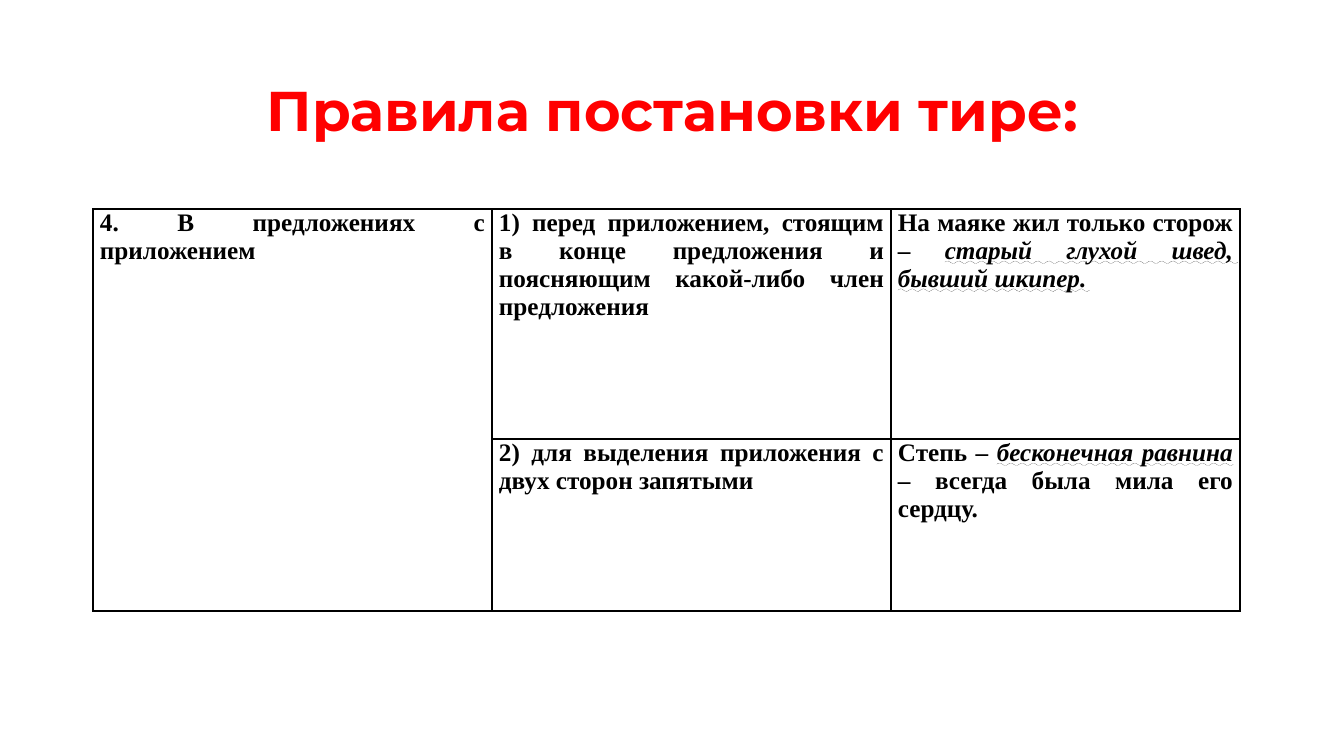
import pptx
import pptx.util
import pptx.dml.color
import pptx.enum.text
import pptx.oxml
import pptx.oxml.ns

TITLE = "Правила постановки тире:"
# (row, column, [(text, is an apposition), ...])
CELLS = [
    (0, 0, [("4. В предложениях с приложением", False)]),
    (0, 1, [("1) перед приложением, стоящим в конце предложения и "
             "поясняющим какой-либо член предложения", False)]),
    (0, 2, [("На маяке жил только сторож – ", False),
            ("старый глухой швед, бывший шкипер.", True)]),
    (1, 1, [("2) для выделения приложения с двух сторон запятыми", False)]),
    (1, 2, [("Степь – ", False), ("бесконечная равнина", True),
            (" – всегда была мила его сердцу.", False)]),
]

SLIDE_W, SLIDE_H = 1344, 756
TITLE_BOX = (93, 40, 1159, 146)
TABLE_LEFT, TABLE_TOP = 93, 209
COLS = [399, 399, 349]
ROWS = [230, 172]
CELL_INSET = 7

RED = pptx.dml.color.RGBColor(0xFF, 0x00, 0x00)
BLACK = pptx.dml.color.RGBColor(0x00, 0x00, 0x00)
ALIGN = pptx.enum.text.PP_ALIGN
ANCHOR = pptx.enum.text.MSO_ANCHOR
WAVY = pptx.enum.text.MSO_UNDERLINE.WAVY_LINE


def px(n):
    return pptx.util.Emu(round(n * 914400 / 100.8))


def add_run(p, text, font="Times New Roman", size=18, color=BLACK, apposition=False):
    r = p.add_run()
    r.text = text
    r.font.name = font
    r.font.size = pptx.util.Pt(size)
    r.font.bold = True
    r.font.color.rgb = color
    if apposition:
        r.font.italic = True
        r.font.underline = WAVY


def add_borders(cell):
    """Draw a 1 pt line on all four sides; call before setting the fill."""
    tc_pr = cell._tc.get_or_add_tcPr()
    for side in ("lnL", "lnR", "lnT", "lnB"):
        tc_pr.append(pptx.oxml.parse_xml(
            f'<a:{side} {pptx.oxml.ns.nsdecls("a")} w="12700"><a:solidFill>'
            f'<a:srgbClr val="{BLACK}"/></a:solidFill></a:{side}>'))


prs = pptx.Presentation()
prs.slide_width, prs.slide_height = px(SLIDE_W), px(SLIDE_H)
s = prs.slides.add_slide(prs.slide_layouts[5])

title = s.shapes.title
title.left, title.top, title.width, title.height = map(px, TITLE_BOX)
title.text_frame.vertical_anchor = ANCHOR.MIDDLE
p = title.text_frame.paragraphs[0]
p.alignment = ALIGN.CENTER
p.line_spacing = 0.9
add_run(p, TITLE, font="Montserrat", size=40, color=RED)

table = s.shapes.add_table(len(ROWS), len(COLS), px(TABLE_LEFT), px(TABLE_TOP),
                           px(sum(COLS)), px(sum(ROWS))).table
table.first_row = table.horz_banding = False
for column, width in zip(table.columns, COLS):
    column.width = px(width)
for row, height in zip(table.rows, ROWS):
    row.height = px(height)
table.cell(0, 0).merge(table.cell(1, 0))

for cell in table.iter_cells():
    add_borders(cell)
    cell.fill.background()
    cell.margin_left = cell.margin_right = px(CELL_INSET)
    cell.margin_top = cell.margin_bottom = 0
    cell.vertical_anchor = ANCHOR.TOP

for row, col, runs in CELLS:
    p = table.cell(row, col).text_frame.paragraphs[0]
    p.alignment = ALIGN.JUSTIFY
    for text, apposition in runs:
        add_run(p, text, apposition=apposition)

prs.save("out.pptx")
